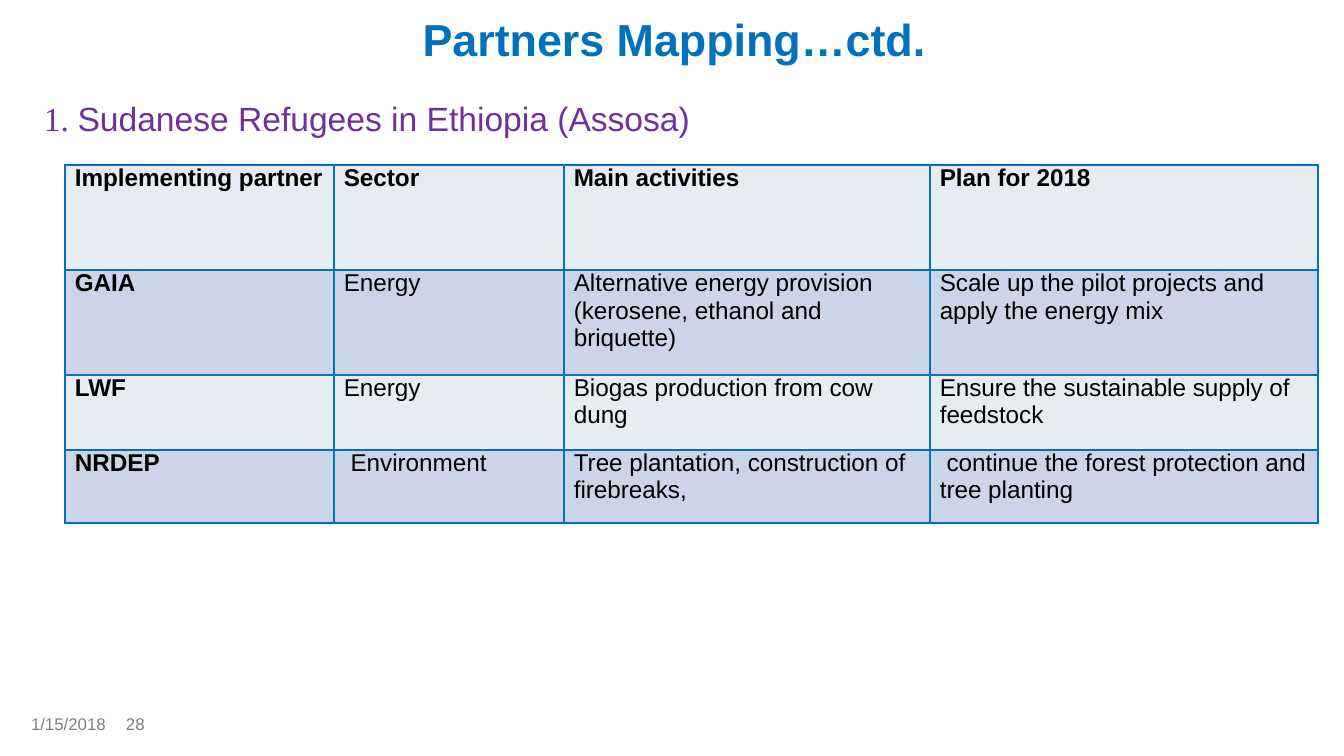
from typing import NamedTuple

from lxml.etree import SubElement
from pptx import Presentation
from pptx.dml.color import RGBColor
from pptx.enum.text import MSO_ANCHOR as Anchor, PP_ALIGN as Align
from pptx.oxml.ns import qn
from pptx.util import Pt

EMU_PER_PX = 914400 / 134.4

BLUE = RGBColor(0x00, 0x72, 0xBC)
PURPLE = RGBColor(0x70, 0x30, 0xA0)
GREY = RGBColor(0x80, 0x80, 0x80)
BLACK = RGBColor(0x00, 0x00, 0x00)
BANDS = (RGBColor(0xE7, 0xEB, 0xF3), RGBColor(0xCC, 0xD5, 0xE7))


class Piece(NamedTuple):
    text: str
    font: str = "Arial"


class Label(NamedTuple):
    box: tuple[int, int, int, int]
    pieces: tuple[Piece, ...]
    size: int
    color: RGBColor
    bold: bool = False
    align: Align = Align.LEFT
    anchor: Anchor = Anchor.TOP
    insets: tuple[int, int, int, int] = (0, 0, 0, 0)
    line_spacing: float = 1.0


LABELS = (
    Label((31, 0, 1286, 66), (Piece("Partners Mapping…ctd."),), 24, BLUE,
          bold=True, align=Align.CENTER, anchor=Anchor.BOTTOM, line_spacing=0.9),
    Label((31, 91, 1286, 601),
          (Piece("1. ", "Times New Roman"),
           Piece("Sudanese Refugees in Ethiopia (Assosa)")),
          18, PURPLE, insets=(13, 7, 13, 0)),
    Label((31, 714, 95, 23), (Piece("1/15/2018"),), 9, GREY),
    Label((126, 714, 67, 23), (Piece("28"),), 9, GREY, insets=(0, 0, 13, 0)),
)

COLUMN_WIDTHS = (269, 230, 366, 388)
ROW_HEIGHTS = (105, 105, 75, 73)
PARTNERS = (
    ("Implementing partner", "Sector", "Main activities", "Plan for 2018"),
    ("GAIA", "Energy",
     "Alternative energy provision (kerosene, ethanol and briquette)",
     "Scale up the pilot projects and apply the energy mix"),
    ("LWF", "Energy", "Biogas production from cow dung",
     "Ensure the sustainable supply of feedstock"),
    ("NRDEP", " Environment",
     "Tree plantation, construction of firebreaks,",
     " continue the forest protection and tree planting"),
)


def px(length: int) -> int:
    return round(length * EMU_PER_PX)


def style(font, name: str, size: int, color: RGBColor, bold: bool) -> None:
    font.name = name
    font.size = Pt(size)
    font.color.rgb = color
    font.bold = bold


def add_label(slide, label: Label) -> None:
    frame = slide.shapes.add_textbox(*map(px, label.box)).text_frame
    frame.word_wrap = True
    frame.vertical_anchor = label.anchor
    (frame.margin_left, frame.margin_top,
     frame.margin_right, frame.margin_bottom) = map(px, label.insets)
    paragraph = frame.paragraphs[0]
    paragraph.alignment = label.align
    paragraph.line_spacing = label.line_spacing
    for piece in label.pieces:
        run = paragraph.add_run()
        run.text = piece.text
        style(run.font, piece.font, label.size, label.color, label.bold)


def add_borders(cell) -> None:
    """Put the four lines before the fill, as the schema requires."""
    properties = cell._tc.get_or_add_tcPr()
    for position, side in enumerate(("lnL", "lnR", "lnT", "lnB")):
        line = SubElement(properties, qn(f"a:{side}"), w=str(Pt(1)))
        fill = SubElement(line, qn("a:solidFill"))
        SubElement(fill, qn("a:srgbClr"), val=str(BLUE))
        properties.insert(position, line)


def add_partner_table(slide, left: int, top: int) -> None:
    table = slide.shapes.add_table(
        len(ROW_HEIGHTS), len(COLUMN_WIDTHS), px(left), px(top),
        px(sum(COLUMN_WIDTHS)), px(sum(ROW_HEIGHTS))).table
    for column, width in zip(table.columns, COLUMN_WIDTHS):
        column.width = px(width)
    for row, height in zip(table.rows, ROW_HEIGHTS):
        row.height = px(height)
    for r, texts in enumerate(PARTNERS):
        for c, text in enumerate(texts):
            cell = table.cell(r, c)
            cell.margin_left = cell.margin_right = px(10)
            cell.margin_top = cell.margin_bottom = 0
            cell.fill.solid()
            cell.fill.fore_color.rgb = BANDS[r % 2]
            add_borders(cell)
            cell.text_frame.text = text
            run = cell.text_frame.paragraphs[0].runs[0]
            style(run.font, "Arial", 13, BLACK, bold=r == 0 or c == 0)


def main() -> None:
    presentation = Presentation()
    presentation.slide_width = px(1344)
    presentation.slide_height = px(756)
    slide = presentation.slides.add_slide(presentation.slide_layouts[6])

    # Title, heading and footer
    for label in LABELS:
        add_label(slide, label)

    # Partners by sector
    add_partner_table(slide, 65, 165)

    presentation.save("out.pptx")


if __name__ == "__main__":
    main()
